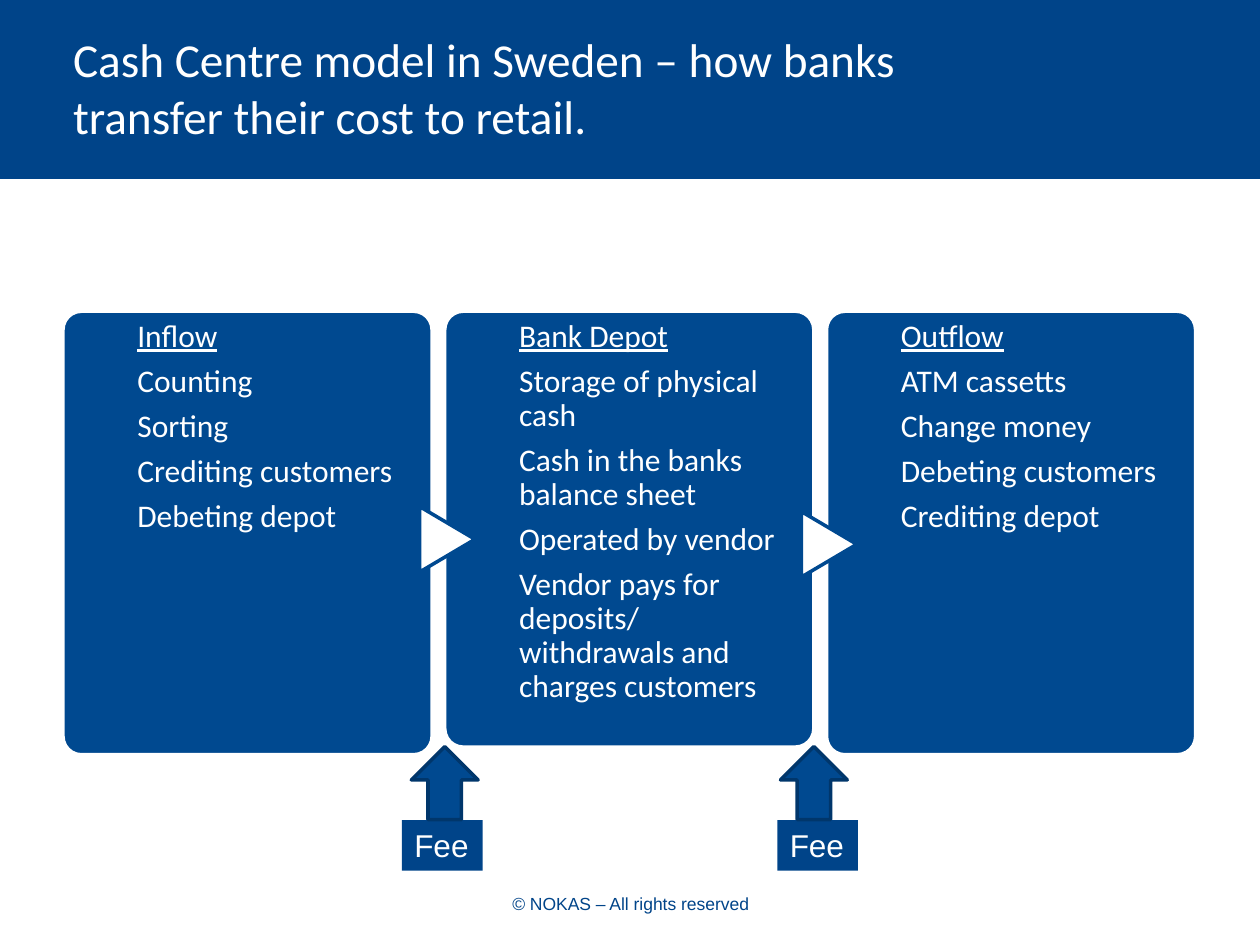
from pptx import Presentation
from pptx.dml.color import RGBColor
from pptx.enum.shapes import MSO_SHAPE
from pptx.enum.text import MSO_ANCHOR, PP_ALIGN
from pptx.util import Inches, Pt

NAVY, BLUE, DARK, WHITE = "004489", "004990", "00366B", "FFFFFF"


def color(value):
    return RGBColor.from_string(value)


def apply(target, values):
    for name, value in values.items():
        setattr(target, name, value)


class SlideBuilder:
    body = {"name": "Calibri", "size": Pt(18)}
    label = {"name": "Arial", "size": Pt(18)}
    title = {"name": "Calibri", "size": Pt(27)}
    footer = {"name": "Arial", "size": Pt(10)}

    def __init__(self, slide):
        self.slide = slide

    def shape(self, kind, box, fill, line=None, rotation=0):
        shape = self.slide.shapes.add_shape(kind, *map(Inches, box))
        shape.shadow.inherit = False
        shape.rotation = rotation
        shape.fill.solid()
        shape.fill.fore_color.rgb = color(fill)
        if line:
            shape.line.color.rgb = color(line)
            shape.line.width = Pt(2)
        else:
            shape.line.fill.background()
        return shape

    def text(self, box, lines, font, text_color=WHITE, insets=(0.1, 0.05, 0.1, 0.05),
             paragraph_format=None, fill=None, underline_first=False, **frame_format):
        shape = self.slide.shapes.add_textbox(*map(Inches, box))
        if fill:
            shape.fill.solid()
            shape.fill.fore_color.rgb = color(fill)
        frame = shape.text_frame
        left, top, right, bottom = map(Inches, insets)
        apply(frame, {"word_wrap": True, "margin_left": left, "margin_top": top,
                      "margin_right": right, "margin_bottom": bottom} | frame_format)
        for index, line in enumerate(lines):
            paragraph = frame.paragraphs[0] if index == 0 else frame.add_paragraph()
            apply(paragraph, paragraph_format or {})
            run = paragraph.add_run()
            run.text = line
            apply(run.font, font)
            run.font.color.rgb = color(text_color)
            if underline_first and index == 0:
                run.font.underline = True

    def panel(self, left, height, lines, arrow_top=None):
        top = 2.47
        panel = self.shape(MSO_SHAPE.ROUNDED_RECTANGLE, (left, top, 2.93, height), BLUE, WHITE)
        panel.adjustments[0] = 0.05
        if arrow_top:
            self.shape(MSO_SHAPE.FLOWCHART_EXTRACT, (left - 0.24, arrow_top, 0.52, 0.44),
                       WHITE, BLUE, 90)
        self.text((left + 0.59, top, 2.18, height), lines, self.body, insets=(0, 0.07, 0, 0),
                  paragraph_format={"line_spacing": 0.9, "space_after": Pt(6.3)},
                  underline_first=True)

    def fee(self, label_left, arrow_left):
        self.text((label_left, 6.51, 0.64, 0.4), ["Fee"], self.label, fill=NAVY, word_wrap=False)
        self.shape(MSO_SHAPE.RIGHT_ARROW, (arrow_left, 5.95, 0.58, 0.53), BLUE, DARK, 270)


def main():
    presentation = Presentation()
    presentation.slide_width = Inches(10)
    presentation.slide_height = Inches(7.5)
    builder = SlideBuilder(presentation.slides.add_slide(presentation.slide_layouts[6]))

    builder.shape(MSO_SHAPE.RECTANGLE, (0, 0, 10.01, 1.42), NAVY)
    builder.text((3.43, 7.04, 3.15, 0.57), ["© NOKAS – All rights reserved"], builder.footer,
                 NAVY, paragraph_format={"alignment": PP_ALIGN.CENTER})
    builder.text((0.58, 0, 7.3, 1.38),
                 ["Cash Centre model in Sweden – how banks transfer their cost to retail."],
                 builder.title, insets=(0, 0.06, 0.12, 0.06), fill=NAVY,
                 vertical_anchor=MSO_ANCHOR.MIDDLE)

    panels = [
        (3.52, None, ["Inflow", "Counting", "Sorting", "Crediting customers",
                      "Debeting depot"]),
        (3.46, 4.06, ["Bank Depot", "Storage of physical cash",
                      "Cash in the banks balance sheet", "Operated by vendor",
                      "Vendor pays for deposits/ withdrawals and charges customers"]),
        (3.52, 4.1, ["Outflow", "ATM cassetts", "Change money", "Debeting customers",
                     "Crediting depot"]),
    ]
    for index, (height, arrow_top, lines) in enumerate(panels):
        builder.panel(0.5 + index * 3.03, height, lines, arrow_top)

    for label_left, arrow_left in ((3.19, 3.24), (6.17, 6.17)):
        builder.fee(label_left, arrow_left)

    presentation.save("out.pptx")


if __name__ == "__main__":
    main()
